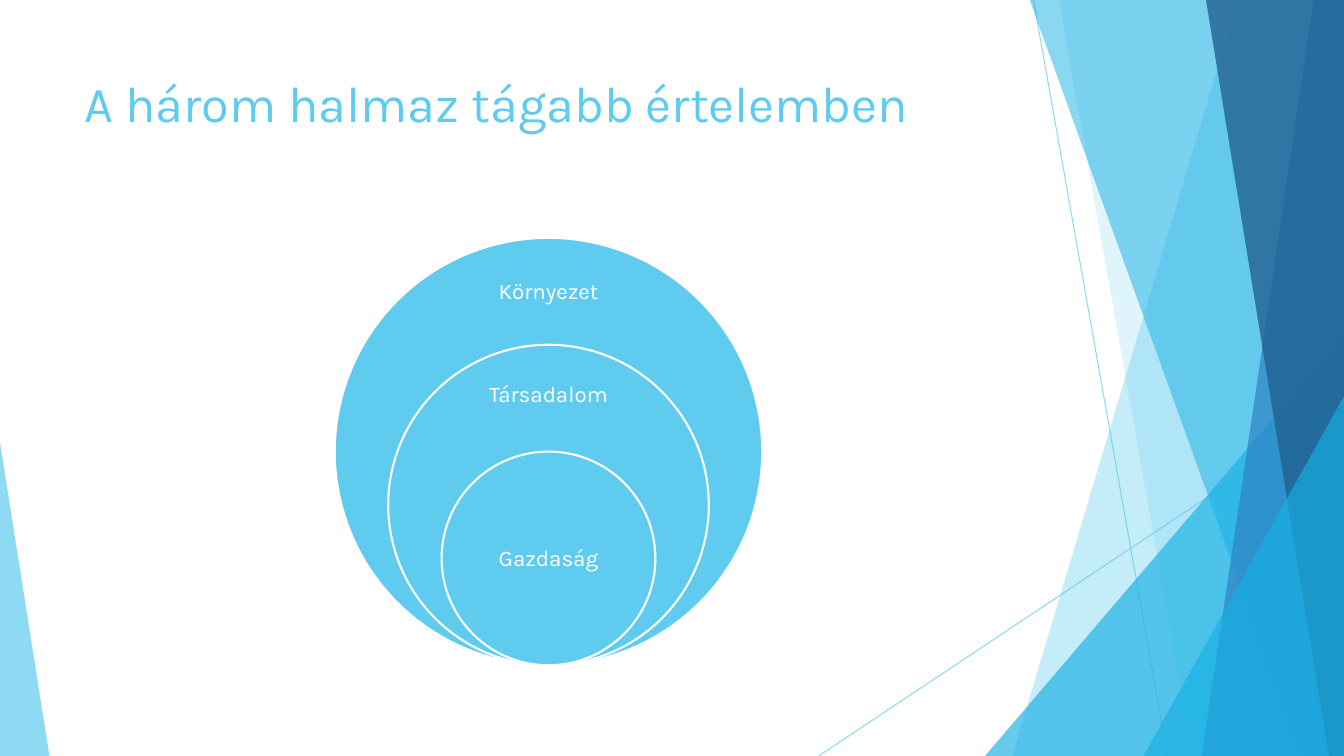
from lxml import etree
from pptx import Presentation
from pptx.dml.color import RGBColor
from pptx.enum.shapes import MSO_CONNECTOR, MSO_SHAPE
from pptx.enum.text import MSO_ANCHOR, MSO_AUTO_SIZE, PP_ALIGN
from pptx.oxml.ns import qn
from pptx.util import Inches, Pt

STRAIGHT = MSO_CONNECTOR.STRAIGHT
OVAL = MSO_SHAPE.OVAL
TRIANGLE = MSO_SHAPE.ISOSCELES_TRIANGLE
TOP, MIDDLE = MSO_ANCHOR.TOP, MSO_ANCHOR.MIDDLE
LEFT, CENTER = PP_ALIGN.LEFT, PP_ALIGN.CENTER
NO_FIT = MSO_AUTO_SIZE.NONE

WIDTH, HEIGHT = 13.33, 7.5
EDGE_TOP = -0.01
SKY, CYAN, BLUE, NAVY, WHITE = "5FCBEF", "17B0E4", "2E83C3", "226292", "FFFFFF"

LINES = [(10.25, 0, 11.58, HEIGHT), (WIDTH, 4.03, 8.12, HEIGHT)]
BACK_BANDS = [(12.28, 10.04, SKY, 36), (10.5, 11.83, SKY, 20)]
FRONT_BANDS = [
    (10.21, 12.91, CYAN, 50),
    (13.03, 11.92, BLUE, 70),
    (11.96, 13.18, NAVY, 80),
]
BACK_TRIANGLE = (9.77, 3.33, 3.56, 1, CYAN, 66)
FRONT_TRIANGLES = [(11.34, 3.93, 1.99, 1, CYAN, 66), (0, 4.39, 0.49, 0, SKY, 70)]

CENTER_X, CIRCLE_BOTTOM, UNIT = 5.44, 6.6, 1.06
SETS = [("Környezet", 4, 2.9), ("Társadalom", 3, 3.92), ("Gazdaság", 2, 5.55)]


def color(hex_code):
    """Return the colour for a hex string."""
    return RGBColor.from_string(hex_code)


class SlideBuilder:
    """Holds the text style and the current slide."""

    font = "Karla"

    def __init__(self, page):
        """Remember the slide to draw on."""
        self.page = page

    def set_alpha(self, shape, percent):
        """Set the opacity of the shape's colour."""
        for node in shape._element.spPr.iter(qn("a:srgbClr")):
            etree.SubElement(node, qn("a:alpha")).set("val", str(percent * 1000))

    def paint(self, shape, fill, alpha):
        """Give a shape a translucent fill without outline or shadow."""
        shape.shadow.inherit = False
        shape.fill.solid()
        shape.fill.fore_color.rgb = color(fill)
        shape.line.fill.background()
        self.set_alpha(shape, alpha)

    def line(self, x1, y1, x2, y2):
        """Draw a thin translucent line."""
        ends = [Inches(value) for value in (x1, y1, x2, y2)]
        connector = self.page.shapes.add_connector(STRAIGHT, *ends)
        connector.line.color.rgb = color(SKY)
        connector.line.width = Pt(0.75)
        self.set_alpha(connector, 70)
        etree.SubElement(connector._element.spPr, qn("a:effectLst"))

    def band(self, top_x, bottom_x, fill, alpha):
        """Draw a slanted band that reaches the right edge."""
        corners = [(WIDTH, EDGE_TOP), (WIDTH, HEIGHT), (bottom_x, HEIGHT)]
        outline = self.page.shapes.build_freeform(Inches(top_x), Inches(EDGE_TOP))
        outline.add_line_segments([(Inches(x), Inches(y)) for x, y in corners])
        self.paint(outline.convert_to_shape(), fill, alpha)

    def triangle(self, left, top, width, apex, fill, alpha):
        """Draw a right triangle that stands on the bottom edge."""
        shape = self.page.shapes.add_shape(
            TRIANGLE, Inches(left), Inches(top), Inches(width), Inches(HEIGHT - top)
        )
        shape.adjustments[0] = apex
        self.paint(shape, fill, alpha)

    def circle(self, diameter):
        """Draw a nested circle on the common bottom point."""
        shape = self.page.shapes.add_shape(
            OVAL,
            Inches(CENTER_X - diameter / 2),
            Inches(CIRCLE_BOTTOM - diameter),
            Inches(diameter),
            Inches(diameter),
        )
        shape.shadow.inherit = False
        shape.fill.solid()
        shape.fill.fore_color.rgb = color(SKY)
        shape.line.color.rgb = color(WHITE)
        shape.line.width = Pt(1.5)

    def fill_text(self, box, text, size, hex_code, align, anchor):
        """Set and format the text of a box."""
        frame = box.text_frame
        frame.text = text
        frame.word_wrap = True
        frame.auto_size = NO_FIT
        frame.vertical_anchor = anchor
        para = frame.paragraphs[0]
        para.alignment = align
        font = para.runs[0].font
        font.name = self.font
        font.size = Pt(size)
        font.color.rgb = color(hex_code)
        return para

    def title(self, text):
        """Place and fill the title placeholder."""
        box = self.page.shapes.title
        box.left, box.top = Inches(0.74), Inches(0.67)
        box.width, box.height = Inches(9.4), Inches(1.44)
        self.fill_text(box, text, 36, SKY, LEFT, TOP)

    def label(self, text, middle):
        """Add a centred label at the given height."""
        width, height = 1.5, 0.6
        box = self.page.shapes.add_textbox(
            Inches(CENTER_X - width / 2),
            Inches(middle - height / 2),
            Inches(width),
            Inches(height),
        )
        frame = box.text_frame
        frame.margin_left = frame.margin_right = Inches(0.12)
        frame.margin_top = frame.margin_bottom = Inches(0.12)
        para = self.fill_text(box, text, 16, WHITE, CENTER, MIDDLE)
        para.line_spacing = 0.9


def main():
    """Build the slide and save it."""
    deck = Presentation()
    deck.slide_width, deck.slide_height = Inches(WIDTH), Inches(HEIGHT)
    builder = SlideBuilder(deck.slides.add_slide(deck.slide_layouts[5]))
    for ends in LINES:
        builder.line(*ends)
    for band in BACK_BANDS:
        builder.band(*band)
    builder.triangle(*BACK_TRIANGLE)
    for band in FRONT_BANDS:
        builder.band(*band)
    for triangle in FRONT_TRIANGLES:
        builder.triangle(*triangle)
    builder.title("A három halmaz tágabb értelemben")
    for name, units, middle in SETS:
        builder.circle(units * UNIT)
        builder.label(name, middle)
    deck.save("out.pptx")


if __name__ == "__main__":
    main()
